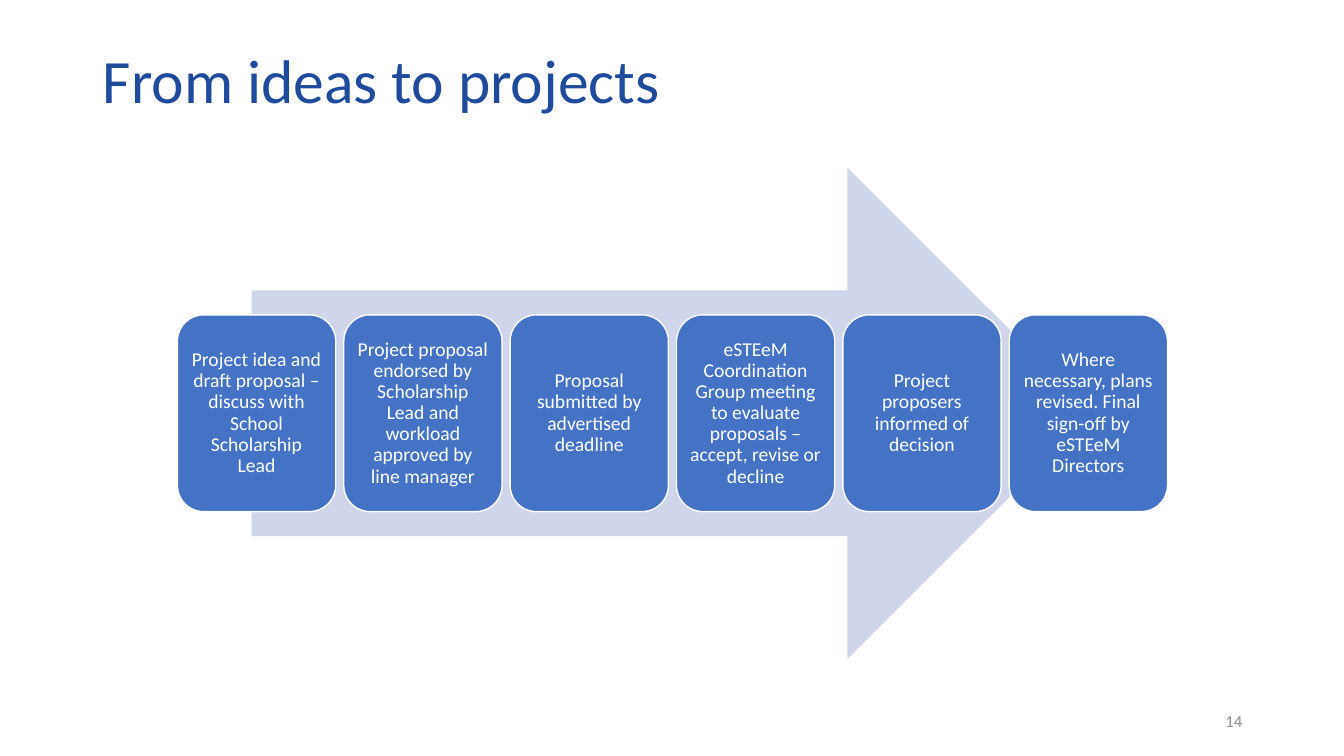
from dataclasses import dataclass

from pptx import Presentation
from pptx.dml.color import RGBColor
from pptx.enum.shapes import MSO_SHAPE
from pptx.enum.text import MSO_ANCHOR, MSO_AUTO_SIZE, PP_ALIGN
from pptx.util import Inches, Pt


@dataclass(frozen=True)
class Theme:
    font: str = "Calibri"
    title_color: str = "1E4B9B"
    number_color: str = "8C8C8C"
    arrow_color: str = "CFD5EA"
    step_color: str = "4472C4"
    white: str = "FFFFFF"
    title_size: int = 44
    step_size: int = 14
    number_size: int = 12


THEME = Theme()

STEPS = [
    "Project idea and draft proposal – discuss with School Scholarship Lead",
    "Project proposal endorsed by Scholarship Lead and workload approved by line manager",
    "Proposal submitted by advertised deadline",
    "eSTEeM Coordination Group meeting to evaluate proposals – accept, revise or decline",
    "Project proposers informed of decision",
    "Where necessary, plans revised. Final sign-off by eSTEeM Directors",
]


def write(frame, text, size, color, align, spacing=1.0):
    frame.text = text
    frame.word_wrap = True
    frame.auto_size = MSO_AUTO_SIZE.NONE
    frame.vertical_anchor = MSO_ANCHOR.MIDDLE
    paragraph = frame.paragraphs[0]
    paragraph.alignment = align
    paragraph.line_spacing = spacing
    paragraph.font.name = THEME.font
    paragraph.font.size = Pt(size)
    paragraph.font.color.rgb = RGBColor.from_string(color)


def add_block(slide, kind, left, top, width, height, color):
    block = slide.shapes.add_shape(
        kind, Inches(left), Inches(top), Inches(width), Inches(height))
    block.shadow.inherit = False
    block.fill.solid()
    block.fill.fore_color.rgb = RGBColor.from_string(color)
    block.line.fill.background()
    return block


def add_title(slide, text, left, top, width, height):
    title = slide.shapes.title
    title.left, title.top = Inches(left), Inches(top)
    title.width, title.height = Inches(width), Inches(height)
    write(title.text_frame, text, THEME.title_size, THEME.title_color,
          PP_ALIGN.LEFT, 0.9)


def add_process(slide, steps, left, top, width, height, gap=0.08):
    # Arrow behind the steps, 85% of the width and centred
    arrow_width = 0.85 * width
    add_block(slide, MSO_SHAPE.RIGHT_ARROW, left + (width - arrow_width) / 2, top,
              arrow_width, height, THEME.arrow_color)

    # Row of equal steps across the middle 40% of the height
    step_width = (width - gap * (len(steps) - 1)) / len(steps)
    for index, text in enumerate(steps):
        step = add_block(slide, MSO_SHAPE.ROUNDED_RECTANGLE,
                         left + index * (step_width + gap), top + 0.3 * height,
                         step_width, 0.4 * height, THEME.step_color)
        step.line.color.rgb = RGBColor.from_string(THEME.white)
        step.line.width = Pt(1)
        frame = step.text_frame
        frame.margin_left = frame.margin_right = Inches(0.06)
        frame.margin_top = frame.margin_bottom = Inches(0.06)
        write(frame, text, THEME.step_size, THEME.white, PP_ALIGN.CENTER, 0.9)


def add_page_number(slide, number, left, top, width, height):
    box = slide.shapes.add_textbox(
        Inches(left), Inches(top), Inches(width), Inches(height))
    write(box.text_frame, number, THEME.number_size, THEME.number_color,
          PP_ALIGN.RIGHT)


def main():
    deck = Presentation()
    deck.slide_width, deck.slide_height = Inches(13.33), Inches(7.5)
    slide = deck.slides.add_slide(deck.slide_layouts.get_by_name("Title Only"))
    add_title(slide, "From ideas to projects", 0.92, 0.4, 11.5, 0.85)
    add_process(slide, STEPS, 1.76, 1.66, 9.82, 4.88)
    add_page_number(slide, "14", 9.42, 6.95, 3, 0.4)
    deck.save("out.pptx")


if __name__ == "__main__":
    main()
